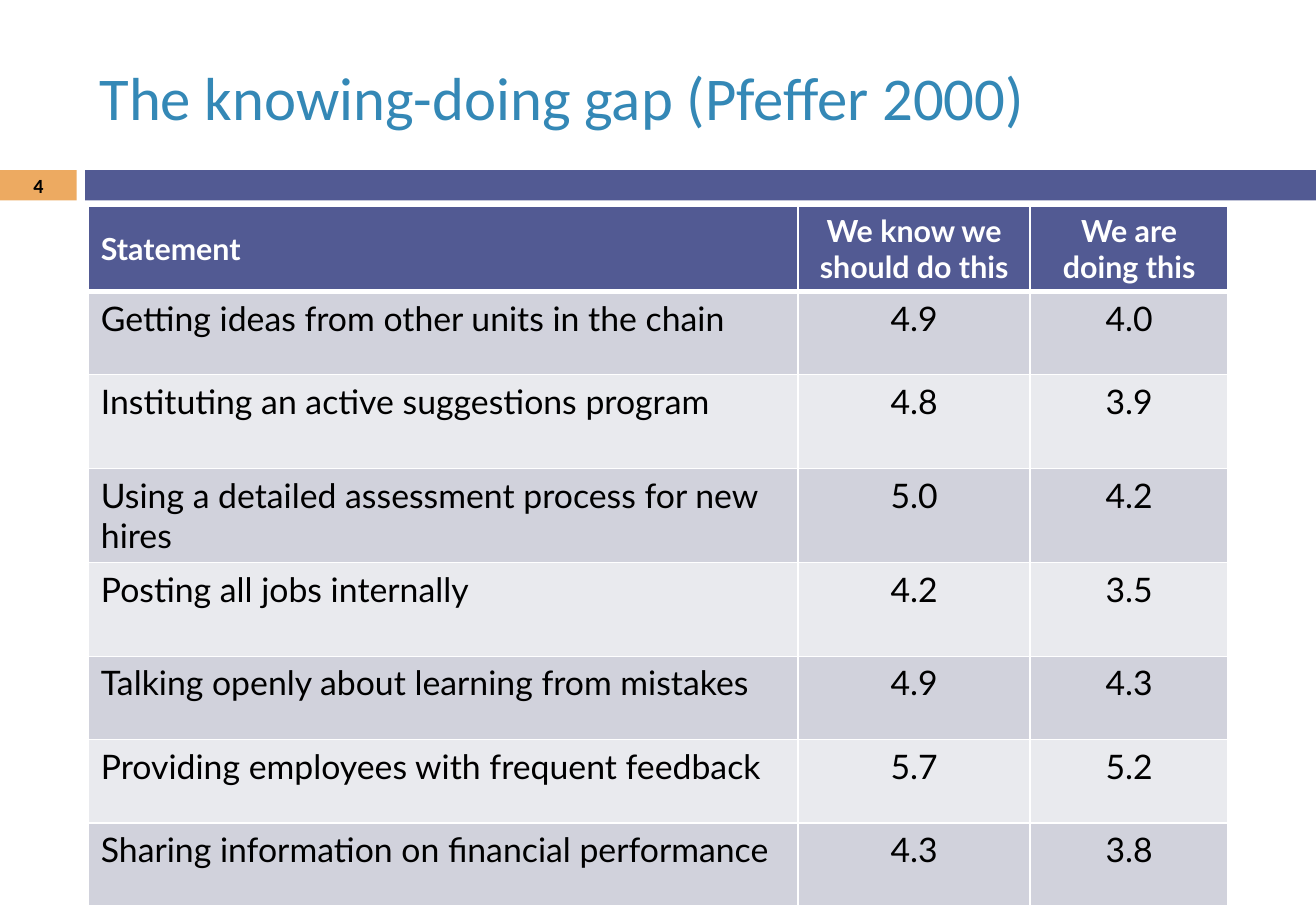
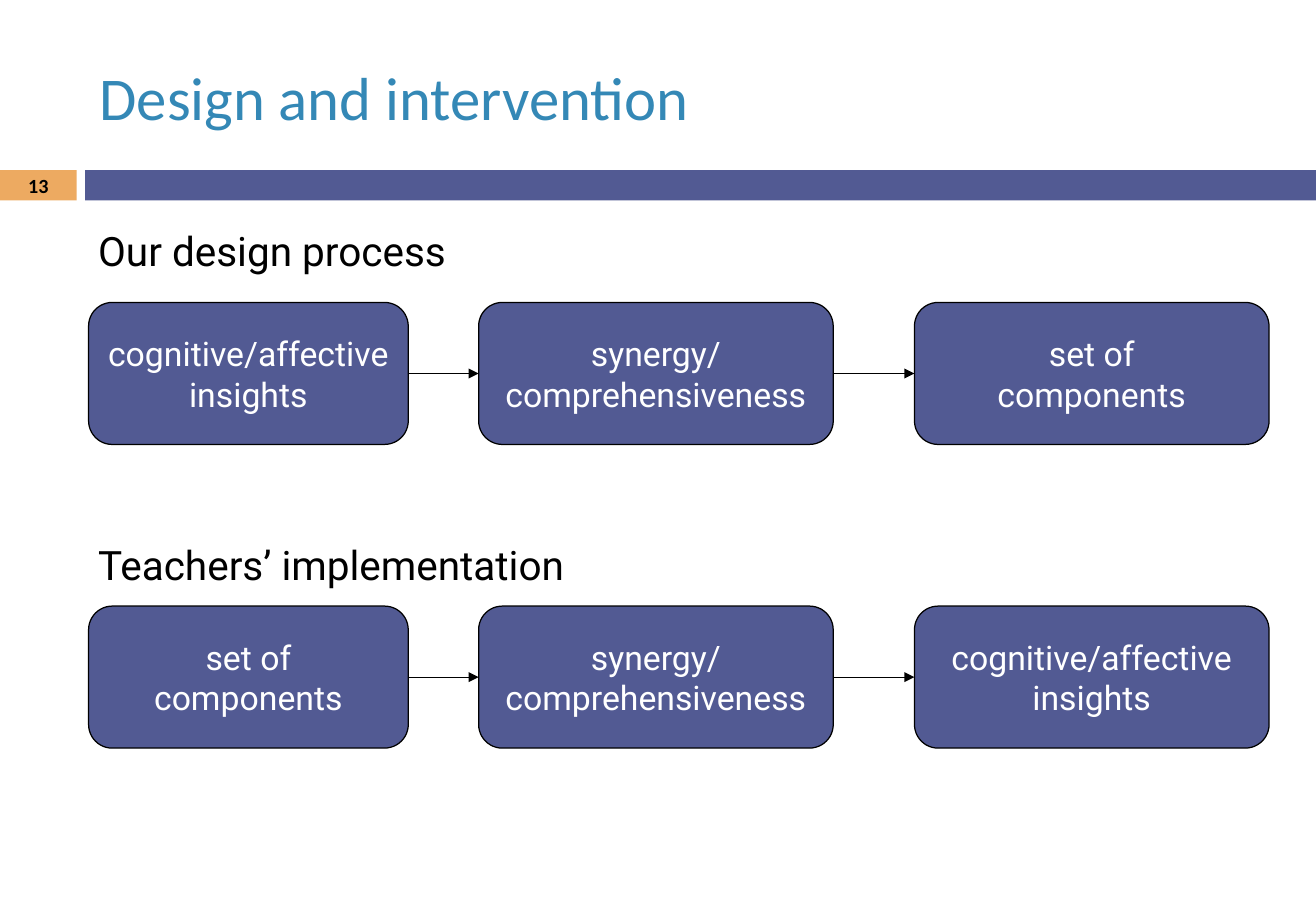
"""Build two slides on the knowing-doing gap and on design and intervention."""
import pptx
import pptx.dml.color
import pptx.enum.shapes
import pptx.enum.text
import pptx.oxml
import pptx.oxml.ns
import pptx.util

Pt = pptx.util.Pt
RGBColor = pptx.dml.color.RGBColor
SHAPE = pptx.enum.shapes.MSO_SHAPE
ALIGN = pptx.enum.text.PP_ALIGN
ANCHOR = pptx.enum.text.MSO_ANCHOR

INDIGO = RGBColor(0x52, 0x5A, 0x93)
ORANGE = RGBColor(0xED, 0xAA, 0x61)
TITLE_BLUE = RGBColor(0x34, 0x88, 0xB6)
ROW_DARK = RGBColor(0xD1, 0xD2, 0xDC)
ROW_LIGHT = RGBColor(0xE9, 0xEA, 0xEE)
BLACK = RGBColor(0, 0, 0)
WHITE = RGBColor(255, 255, 255)

SLIDE_WIDTH, SLIDE_HEIGHT = 780, 540
BAND_TOP, BAND_HEIGHT = 100.8, 18
NUMBER_WIDTH, BAND_LEFT = 45.5, 50.4

STATEMENT_COLUMNS = (420.5, 137.5, 117.4)
ROW_HEIGHT, TALL_ROW_HEIGHT = 49.3, 55.7
TALL_ROWS = (2, 3, 4)
STATEMENTS = (
    ("Statement", "We know we\nshould do this", "We are\ndoing this"),
    ("Getting ideas from other units in the chain", "4.9", "4.0"),
    ("Instituting an active suggestions program", "4.8", "3.9"),
    ("Using a detailed assessment process for new hires", "5.0", "4.2"),
    ("Posting all jobs internally", "4.2", "3.5"),
    ("Talking openly about learning from mistakes", "4.9", "4.3"),
    ("Providing employees with frequent feedback", "5.7", "5.2"),
    ("Sharing information on financial performance", "4.3", "3.8"),
)

BOX_COLUMNS = ((52.5, 189.5), (283.7, 210.2), (542, 210.2))
BOX_HEIGHT = 84.2
INSIGHTS = ("cognitive/affective", "insights")
SYNERGY = ("synergy/", "comprehensiveness")
PROCESSES = (
    ("Our design process", 130.3, 179.3,
     (INSIGHTS, SYNERGY, ("set of\ncomponents",))),
    ("Teachers’ implementation", 316.8, 359.3,
     (("set of", "components"), SYNERGY, INSIGHTS)),
)


def write(text_frame, paragraphs, font, size, color, bold=False, align=ALIGN.LEFT):
    """Fill a text frame; a newline inside a paragraph becomes a line break."""
    for index, text in enumerate(paragraphs):
        paragraph = text_frame.add_paragraph() if index else text_frame.paragraphs[0]
        paragraph.alignment = align
        for line_index, line in enumerate(text.split("\n")):
            if line_index:
                paragraph.add_line_break()
            run = paragraph.add_run()
            run.text = line
            run.font.name = font
            run.font.size = Pt(size)
            run.font.bold = bold
            run.font.color.rgb = color


def add_block(slide, preset, left, top, width, height, fill):
    """Add a filled shape without a line or a shadow."""
    shape = slide.shapes.add_shape(preset, Pt(left), Pt(top), Pt(width), Pt(height))
    shape.shadow.inherit = False
    shape.fill.solid()
    shape.fill.fore_color.rgb = fill
    shape.line.fill.background()
    return shape


def add_label(slide, text, left, top, width, height):
    """Add a heading above a process."""
    label = slide.shapes.add_textbox(Pt(left), Pt(top), Pt(width), Pt(height))
    label.text_frame.word_wrap = False
    write(label.text_frame, (text,), "Roboto", 24, BLACK)


def prepare_layout(layout, slide):
    """Give the layout its title position and, by way of a slide, its bands."""
    title = layout.placeholders[0]
    title.left, title.top = Pt(51.8), Pt(18)
    title.width, title.height = Pt(695.5), Pt(77.8)
    band_width = SLIDE_WIDTH - BAND_LEFT
    for left, width, fill in ((0, NUMBER_WIDTH, ORANGE), (BAND_LEFT, band_width, INDIGO)):
        band = add_block(slide, SHAPE.RECTANGLE, left, BAND_TOP, width, BAND_HEIGHT, fill)
        layout.shapes.element.append(band.element)


def add_heading(slide, title, number):
    """Write the title and the page number of a slide."""
    frame = slide.shapes.title.text_frame
    frame.vertical_anchor = ANCHOR.MIDDLE
    write(frame, (title,), "Calibri", 36, TITLE_BLUE)
    page = slide.shapes.add_textbox(0, Pt(BAND_TOP), Pt(NUMBER_WIDTH), Pt(BAND_HEIGHT))
    page.text_frame.word_wrap = True
    page.text_frame.vertical_anchor = ANCHOR.MIDDLE
    write(page.text_frame, (number,), "Calibri", 11.9, BLACK, True, ALIGN.CENTER)


def set_borders(cell, top, bottom):
    """Draw white borders around a cell, 1 point wide at the sides."""
    properties = cell._tc.get_or_add_tcPr()
    for side, width in (("L", 1), ("R", 1), ("T", top), ("B", bottom)):
        properties.append(pptx.oxml.parse_xml(
            f'<a:ln{side} {pptx.oxml.ns.nsdecls("a")} w="{Pt(width)}"><a:solidFill>'
            f'<a:srgbClr val="{WHITE}"/></a:solidFill></a:ln{side}>'))


def add_statement_table(slide):
    """Add the table that compares knowing with doing."""
    heights = [TALL_ROW_HEIGHT if index in TALL_ROWS else ROW_HEIGHT
               for index in range(len(STATEMENTS))]
    table = slide.shapes.add_table(
        len(STATEMENTS), len(STATEMENT_COLUMNS), Pt(52.6), Pt(122.4),
        Pt(sum(STATEMENT_COLUMNS)), Pt(sum(heights))).table
    for column, width in zip(table.columns, STATEMENT_COLUMNS):
        column.width = Pt(width)
    for row_index, (row, values) in enumerate(zip(table.rows, STATEMENTS)):
        row.height = Pt(heights[row_index])
        header = row_index == 0
        fill = INDIGO if header else (ROW_LIGHT, ROW_DARK)[row_index % 2]
        for column_index, (cell, text) in enumerate(zip(row.cells, values)):
            set_borders(cell, 3 if row_index == 1 else 1, 3 if header else 1)
            cell.fill.solid()
            cell.fill.fore_color.rgb = fill
            if header and column_index == 0:
                cell.vertical_anchor = ANCHOR.MIDDLE
            write(cell.text_frame, (text,), "Lato", 18 if header else 20,
                  WHITE if header else BLACK, header,
                  ALIGN.CENTER if column_index else ALIGN.LEFT)


def add_box(slide, paragraphs, left, top, width):
    """Add one rounded step of a process."""
    box = add_block(slide, SHAPE.ROUNDED_RECTANGLE, left, top, width, BOX_HEIGHT, INDIGO)
    box.line.color.rgb = BLACK
    box.line.width = Pt(0.75)
    box.text_frame.word_wrap = False
    box.text_frame.vertical_anchor = ANCHOR.MIDDLE
    write(box.text_frame, paragraphs, "Roboto", 20, WHITE, align=ALIGN.CENTER)
    return box


def add_arrow(slide, source, target):
    """Connect the right side of one box to the left side of the next."""
    arrow = slide.shapes.add_connector(
        pptx.enum.shapes.MSO_CONNECTOR.STRAIGHT, 0, 0, 0, 0)
    arrow.begin_connect(source, 3)
    arrow.end_connect(target, 1)
    arrow.line.color.rgb = BLACK
    arrow.line.width = Pt(0.75)
    namespace = pptx.oxml.ns.nsdecls("a")
    arrow.line._get_or_add_ln().append(
        pptx.oxml.parse_xml(f'<a:tailEnd {namespace} type="triangle"/>'))
    arrow.element.spPr.append(pptx.oxml.parse_xml(f"<a:effectLst {namespace}/>"))


def add_process(slide, label, label_top, box_top, steps):
    """Add a labelled row of boxes joined by arrows."""
    add_label(slide, label, 51.1, label_top, 380, 36)
    boxes = [add_box(slide, paragraphs, left, box_top, width)
             for paragraphs, (left, width) in zip(steps, BOX_COLUMNS)]
    for source, target in zip(boxes, boxes[1:]):
        add_arrow(slide, source, target)


def main():
    """Build and save the presentation."""
    presentation = pptx.Presentation()
    presentation.slide_width, presentation.slide_height = Pt(SLIDE_WIDTH), Pt(SLIDE_HEIGHT)
    layout = presentation.slide_layouts[5]
    gap_slide = presentation.slides.add_slide(layout)
    prepare_layout(layout, gap_slide)
    add_heading(gap_slide, "The knowing-doing gap (Pfeffer 2000)", "4")
    add_statement_table(gap_slide)

    design_slide = presentation.slides.add_slide(layout)
    add_heading(design_slide, "Design and intervention", "13")
    for process in PROCESSES:
        add_process(design_slide, *process)
    presentation.save("out.pptx")


if __name__ == "__main__":
    main()
